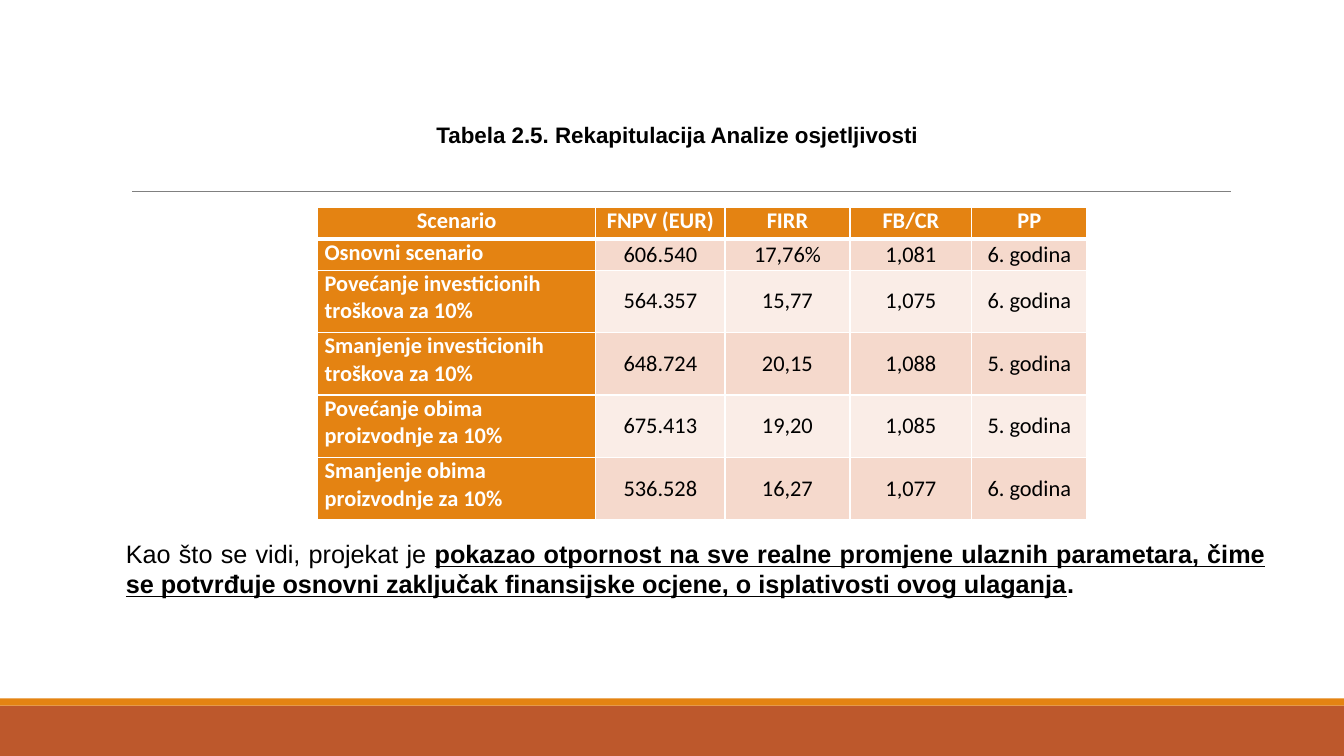
from lxml.etree import SubElement
from pptx import Presentation
from pptx.dml.color import RGBColor
from pptx.enum.shapes import MSO_CONNECTOR as Connector, MSO_SHAPE as Shape
from pptx.enum.text import MSO_ANCHOR as Anchor, PP_ALIGN as Align
from pptx.oxml.ns import qn
from pptx.util import Inches, Pt

ORANGE, RUST, WHITE, BLACK, GRAY = "E48312", "BD582C", "FFFFFF", "000000", "808080"
BANDS = ("F5D9CC", "FAEDE7")
COLUMN_WIDTHS = (2.76, 1.28, 1.24, 1.21, 1.14)
ROW_HEIGHTS = (0.31, 0.31, 0.62, 0.62, 0.62, 0.62)
SCENARIOS = (
    ("Scenario", "FNPV (EUR)", "FIRR", "FB/CR", "PP"),
    ("Osnovni scenario", "606.540", "17,76%", "1,081", "6. godina"),
    ("Povećanje investicionih troškova za 10%", "564.357", "15,77", "1,075", "6. godina"),
    ("Smanjenje investicionih troškova za 10%", "648.724", "20,15", "1,088", "5. godina"),
    ("Povećanje obima proizvodnje za 10%", "675.413", "19,20", "1,085", "5. godina"),
    ("Smanjenje obima proizvodnje za 10%", "536.528", "16,27", "1,077", "6. godina"),
)


def color(value):
    return RGBColor.from_string(value)


def add_span(para, text, size, font, hue=BLACK, bold=False, underline=False):
    span = para.add_run()
    span.text = text
    span.font.size = Pt(size)
    span.font.name = font
    span.font.color.rgb = color(hue)
    span.font.bold = bold
    span.font.underline = underline


def add_bar(page, left, top, width, height, hue):
    bar = page.shapes.add_shape(
        Shape.RECTANGLE, Inches(left), Inches(top), Inches(width), Inches(height))
    bar.shadow.inherit = False
    bar.fill.solid()
    bar.fill.fore_color.rgb = color(hue)
    bar.line.fill.background()


def add_footer(page, left, top, width, height):
    stripe = 0.07
    add_bar(page, left, top + stripe, width, height - stripe, RUST)
    add_bar(page, left, top, width, stripe, ORANGE)


def add_rule(page, left, top, width):
    rule = page.shapes.add_connector(
        Connector.STRAIGHT, Inches(left), Inches(top), Inches(left + width), Inches(top))
    rule.line.color.rgb = color(GRAY)
    rule.line.width = Pt(0.5)
    SubElement(rule._element.spPr, qn("a:effectLst"))


def add_text(page, left, top, width, height, spans, size, anchor=Anchor.TOP):
    box = page.shapes.add_textbox(Inches(left), Inches(top), Inches(width), Inches(height))
    frame = box.text_frame
    frame.word_wrap = True
    frame.vertical_anchor = anchor
    para = frame.paragraphs[0]
    para.alignment = Align.JUSTIFY
    for text, bold, underline in spans:
        add_span(para, text, size, "Arial", bold=bold, underline=underline)


def set_borders(cell, top, bottom):
    properties = cell._tc.get_or_add_tcPr()
    for side, width in (("L", 1), ("R", 1), ("T", top), ("B", bottom)):
        line = SubElement(properties, qn(f"a:ln{side}"), w=str(Pt(width)))
        SubElement(SubElement(line, qn("a:solidFill")), qn("a:srgbClr"), val=WHITE)


def fill_cell(cell, text, row, column):
    header, label = row == 0, column == 0
    strong = header or label
    set_borders(cell, 3 if row == 1 else 1, 3 if header else 1)
    cell.fill.solid()
    cell.fill.fore_color.rgb = color(ORANGE if strong else BANDS[(row - 1) % 2])
    cell.margin_left = cell.margin_right = Inches(0.07)
    cell.margin_top = cell.margin_bottom = 0
    cell.vertical_anchor = Anchor.TOP if strong else Anchor.MIDDLE
    para = cell.text_frame.paragraphs[0]
    para.alignment = Align.LEFT if label and not header else Align.CENTER
    add_span(para, text, 16, "Calibri", WHITE if strong else BLACK, bold=strong)


def add_scenarios(page, left, top):
    table = page.shapes.add_table(
        len(ROW_HEIGHTS), len(COLUMN_WIDTHS), Inches(left), Inches(top),
        Inches(sum(COLUMN_WIDTHS)), Inches(sum(ROW_HEIGHTS))).table
    for column, width in zip(table.columns, COLUMN_WIDTHS):
        column.width = Inches(width)
    for row, height in zip(table.rows, ROW_HEIGHTS):
        row.height = Inches(height)
    for row, texts in enumerate(SCENARIOS):
        for column, text in enumerate(texts):
            fill_cell(table.cell(row, column), text, row, column)


def main():
    deck = Presentation()
    deck.slide_width, deck.slide_height = Inches(13.33), Inches(7.5)
    page = deck.slides.add_slide(deck.slide_layouts[6])
    add_footer(page, 0, 6.93, 13.33, 0.57)
    add_rule(page, 1.31, 1.9, 10.9)
    add_scenarios(page, 3.15, 2.06)
    add_text(page, 4.23, 1.15, 5.74, 0.37, [
        ("Tabela 2.5. Rekapitulacija Analize osjetljivosti", True, False),
    ], 16, Anchor.MIDDLE)
    add_text(page, 1.15, 5.29, 11.5, 0.71, [
        ("Kao što se vidi, projekat je ", False, False),
        ("pokazao otpornost na sve realne promjene ulaznih parametara, čime "
         "se potvrđuje osnovni zaključak finansijske ocjene, o isplativosti "
         "ovog ulaganja", True, True),
        (".", True, False),
    ], 18)
    deck.save("out.pptx")


if __name__ == "__main__":
    main()
